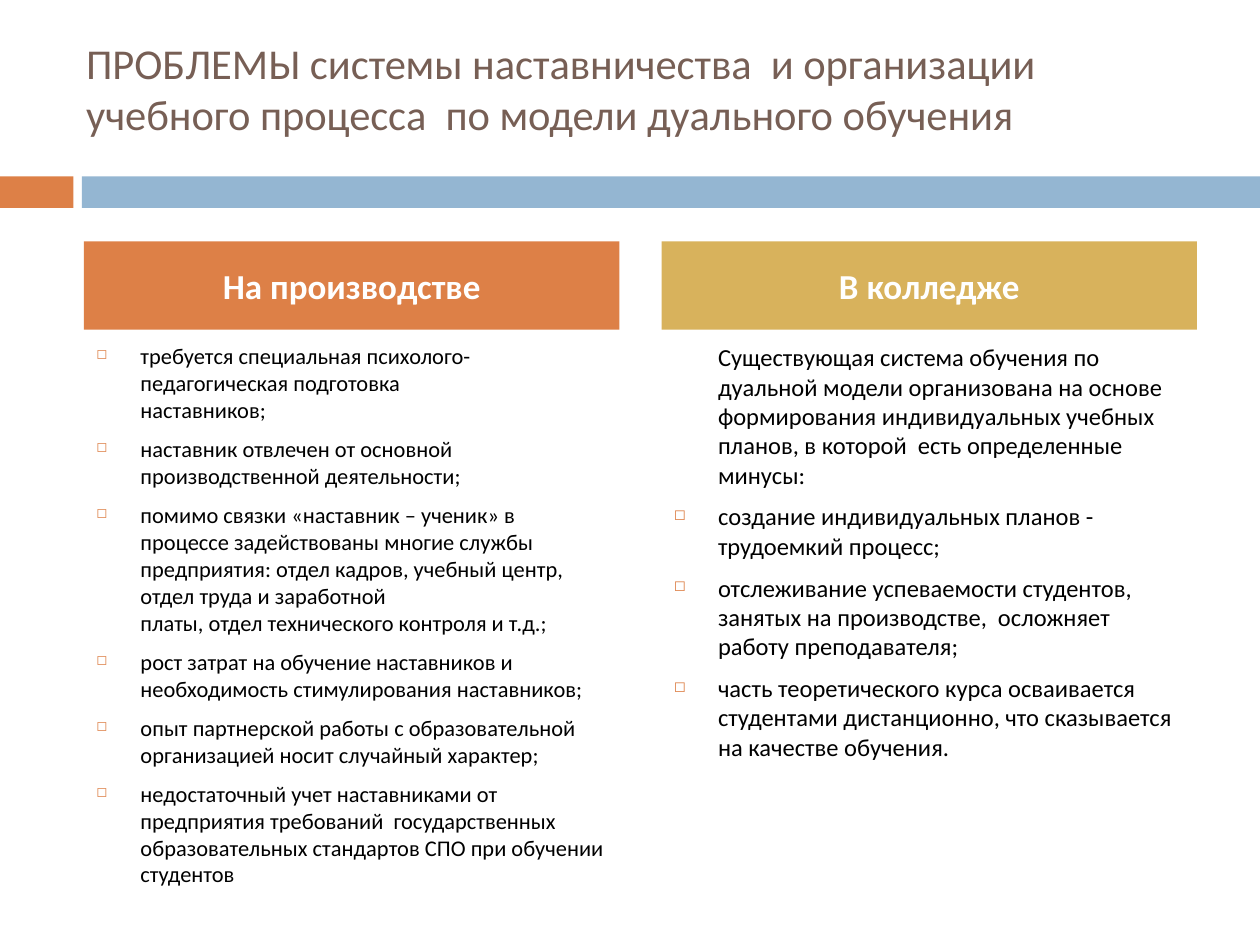
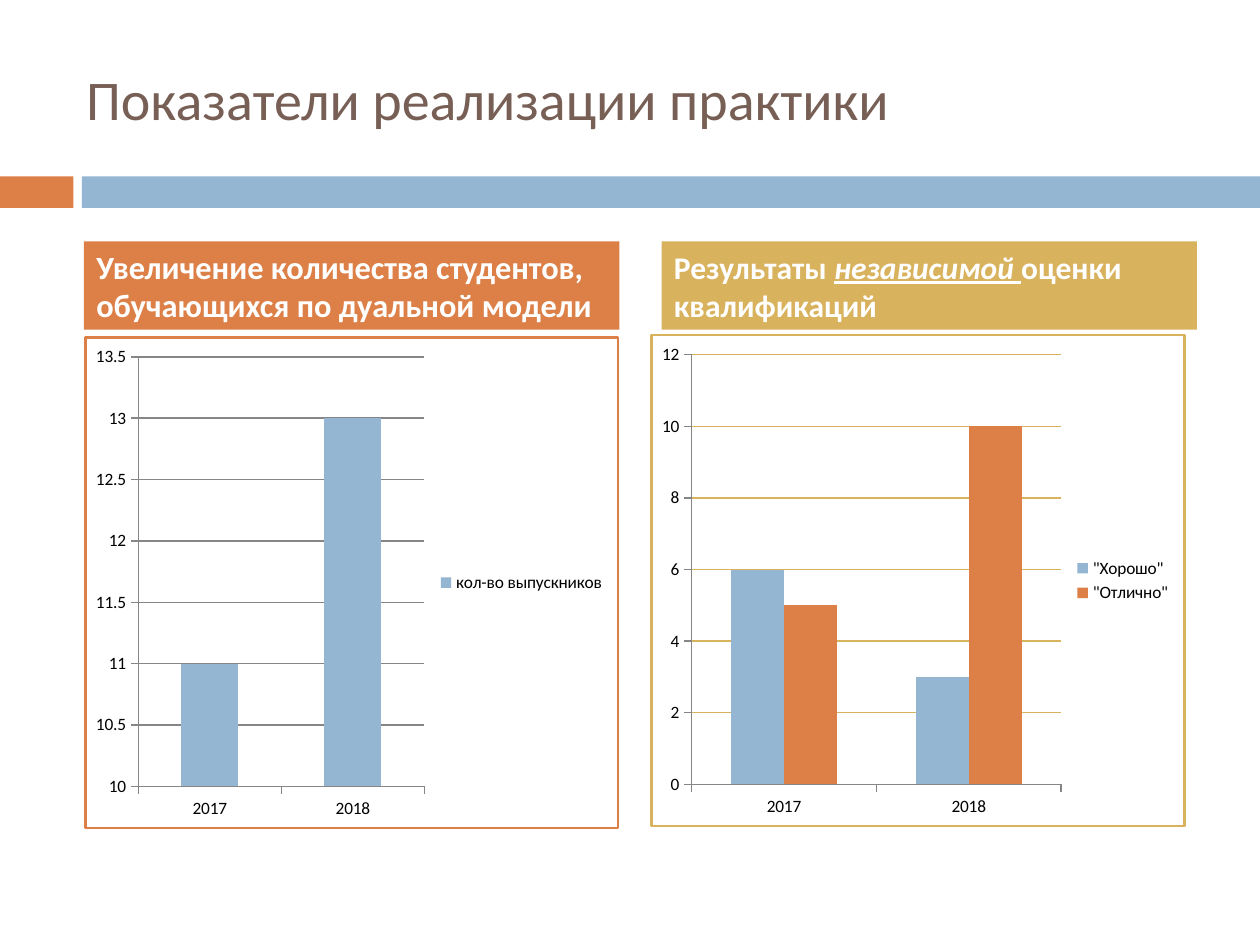
import pptx
import pptx.chart.data
import pptx.dml.color
import pptx.enum.chart
import pptx.enum.shapes
import pptx.enum.text
import pptx.oxml
import pptx.oxml.ns
import pptx.util

Pt = pptx.util.Pt
ANCHOR = pptx.enum.text.MSO_ANCHOR
ALIGN = pptx.enum.text.PP_ALIGN

FONT = "Calibri"
COLORS = {
    "orange": "DD8047",
    "blue": "94B6D2",
    "gold": "D8B25C",
    "title": "775F55",
    "axis": "868686",
    "text": "000000",
    "white": "FFFFFF",
}

# Boxes are left, top, width, height in points.
PAGE_SIZE = (720, 540)
BANDS = [("orange", (0, 100.8, 42, 18)), ("blue", (46.8, 100.8, 673.2, 18))]
COLUMN_LEFTS = (48, 378)
COLUMN_WIDTH = 306
HEADERS = [(left, 138, COLUMN_WIDTH, 50.4) for left in COLUMN_LEFTS]
BODIES = [(left, 192, COLUMN_WIDTH, 282) for left in COLUMN_LEFTS]
SPACE_BEFORE = 7
INDENT = 25.2

PRODUCTION_PROBLEMS = [
    "требуется специальная психолого-педагогическая подготовка\nнаставников;",
    "наставник отвлечен от основной производственной деятельности;",
    "помимо связки «наставник – ученик» в процессе задействованы многие службы "
    "предприятия: отдел кадров, учебный центр, отдел труда и заработной\n"
    "платы, отдел технического контроля и т.д.;",
    "рост затрат на обучение наставников и необходимость стимулирования наставников;",
    "опыт партнерской работы с образовательной организацией носит случайный характер;",
    "недостаточный учет наставниками от предприятия требований  государственных "
    "образовательных стандартов СПО при обучении студентов",
]
COLLEGE_INTRO = (
    "Существующая система обучения по дуальной модели организована на основе "
    "формирования индивидуальных учебных планов, в которой  есть определенные минусы:"
)
COLLEGE_PROBLEMS = [
    "создание индивидуальных планов - трудоемкий процесс;",
    "отслеживание успеваемости студентов, занятых на производстве,  осложняет  "
    "работу преподавателя;",
    "часть теоретического курса осваивается студентами дистанционно, что сказывается "
    "на качестве обучения.",
]


def rgb(name):
    return pptx.dml.color.RGBColor.from_string(COLORS[name])


def points(box):
    return [Pt(length) for length in box]


def style_font(font, size, color, bold=False):
    font.name = FONT
    font.size = Pt(size)
    font.bold = bold
    font.color.rgb = rgb(color)


def add_rectangle(page, box, color):
    rectangle = page.shapes.add_shape(
        pptx.enum.shapes.MSO_SHAPE.RECTANGLE, *points(box))
    rectangle.shadow.inherit = False
    rectangle.fill.solid()
    rectangle.fill.fore_color.rgb = rgb(color)
    rectangle.line.fill.background()
    return rectangle


def add_page(deck, title, size, height, bottom_margin=3.6):
    """Add a title-only slide with the two bands under its title."""
    page = deck.slides.add_slide(deck.slide_layouts[5])
    for color, box in BANDS:
        add_rectangle(page, box, color)
    holder = page.shapes.title
    holder.left, holder.top, holder.width, holder.height = points((42, 21.6, 642, height))
    frame = holder.text_frame
    frame.text = title
    frame.auto_size = pptx.enum.text.MSO_AUTO_SIZE.NONE
    frame.vertical_anchor = ANCHOR.MIDDLE
    frame.margin_bottom = Pt(bottom_margin)
    para = frame.paragraphs[0]
    para.alignment = ALIGN.LEFT
    style_font(para.runs[0].font, size, "title")
    return page


def add_header(page, box, color, texts, size, alignment=ALIGN.LEFT):
    """Add a filled column header; every second text is italic and underlined."""
    frame = add_rectangle(page, box, color).text_frame
    frame.word_wrap = True
    frame.vertical_anchor = ANCHOR.MIDDLE
    para = frame.paragraphs[0]
    para.alignment = alignment
    para.space_before = Pt(SPACE_BEFORE)
    for index, text in enumerate(texts):
        span = para.add_run()
        span.text = text
        style_font(span.font, size, "white", bold=True)
        span.font.italic = span.font.underline = index % 2 == 1


def add_bullet(properties):
    namespace = pptx.oxml.ns.nsdecls("a")
    for markup in (
        f'<a:buClr {namespace}><a:srgbClr val="{COLORS["orange"]}"/></a:buClr>',
        f'<a:buSzPct {namespace} val="60000"/>',
        f'<a:buChar {namespace} char="◻"/>',
    ):
        properties.append(pptx.oxml.parse_xml(markup))


def add_list(page, box, items, size, intro=None):
    """Add a bulleted list, with an optional plain paragraph above it."""
    frame = page.shapes.add_textbox(*points(box)).text_frame
    frame.word_wrap = True
    texts = [intro, *items] if intro else items
    for index, text in enumerate(texts):
        para = frame.add_paragraph() if index else frame.paragraphs[0]
        para.text = text
        para.space_before = Pt(SPACE_BEFORE)
        properties = para._p.get_or_add_pPr()
        properties.set("marL", str(Pt(INDENT)))
        if text != intro:
            properties.set("indent", str(-Pt(INDENT)))
            add_bullet(properties)
        for span in para.runs:
            style_font(span.font, size, "text")


def frame_chart(chart, color):
    """Give the whole chart area a white fill and a coloured border."""
    area = pptx.oxml.parse_xml(
        f'<c:spPr {pptx.oxml.ns.nsdecls("c", "a")}>'
        f'<a:solidFill><a:srgbClr val="{COLORS["white"]}"/></a:solidFill>'
        f'<a:ln w="{Pt(1.5)}"><a:solidFill><a:srgbClr val="{COLORS[color]}"/>'
        '</a:solidFill></a:ln></c:spPr>')
    chart._chartSpace.find(pptx.oxml.ns.qn("c:chart")).addnext(area)


def add_column_chart(page, box, series, scale, border, grid):
    """Add a column chart; series holds (name, values, colour) triples."""
    data = pptx.chart.data.CategoryChartData()
    data.categories = ["2017", "2018"]
    for name, values, _ in series:
        data.add_series(name, values)
    chart = page.shapes.add_chart(
        pptx.enum.chart.XL_CHART_TYPE.COLUMN_CLUSTERED, *points(box), data).chart
    style_font(chart.font, 10, "text")
    frame_chart(chart, border)
    chart.has_title = False
    chart.has_legend = True
    chart.legend.position = pptx.enum.chart.XL_LEGEND_POSITION.RIGHT
    chart.legend.include_in_layout = False

    plot = chart.plots[0]
    plot.vary_by_categories = False
    plot.gap_width = 150
    plot.overlap = 0
    for column, (_, _, color) in zip(plot.series, series):
        column.format.fill.solid()
        column.format.fill.fore_color.rgb = rgb(color)

    value_axis = chart.value_axis
    value_axis.minimum_scale, value_axis.maximum_scale, value_axis.major_unit = scale
    value_axis.has_major_gridlines = True
    lines = [(value_axis.major_gridlines.format.line, grid)]
    for axis in (chart.category_axis, value_axis):
        axis.major_tick_mark = pptx.enum.chart.XL_TICK_MARK.OUTSIDE
        lines.append((axis.format.line, "axis"))
    for line, color in lines:
        line.color.rgb = rgb(color)
        line.width = Pt(0.79)


def build_problems(deck):
    page = add_page(
        deck,
        "ПРОБЛЕМЫ системы наставничества  и организации учебного процесса  "
        "по модели дуального обучения",
        24.3, 78.5, bottom_margin=24.5)
    add_list(page, BODIES[0], PRODUCTION_PROBLEMS, 12.8)
    add_list(page, BODIES[1], COLLEGE_PROBLEMS, 14, COLLEGE_INTRO)
    add_header(page, HEADERS[0], "orange", ["На производстве"], 20, ALIGN.CENTER)
    add_header(page, HEADERS[1], "gold", ["В колледже"], 20, ALIGN.CENTER)


def build_indicators(deck):
    page = add_page(deck, "Показатели реализации практики", 32, 68.4)
    add_header(page, HEADERS[0], "orange",
               ["Увеличение количества студентов, обучающихся по дуальной модели"], 18.5)
    add_header(page, HEADERS[1], "gold",
               ["Результаты ", "независимой ", "оценки квалификаций"], 18)
    add_column_chart(page, BODIES[0], [("кол-во выпускников", (11, 13), "blue")],
                     (10, 13.5, 0.5), "orange", "axis")
    left, top, width, height = BODIES[1]
    add_column_chart(page, (left - 6.5, top - 1.2, width, height),
                     [('"Хорошо"', (6, 3), "blue"), ('"Отлично"', (5, 10), "orange")],
                     (0, 12, 2), "gold", "gold")


def main():
    deck = pptx.Presentation()
    deck.slide_width, deck.slide_height = points(PAGE_SIZE)
    build_problems(deck)
    build_indicators(deck)
    deck.save("out.pptx")


if __name__ == "__main__":
    main()
